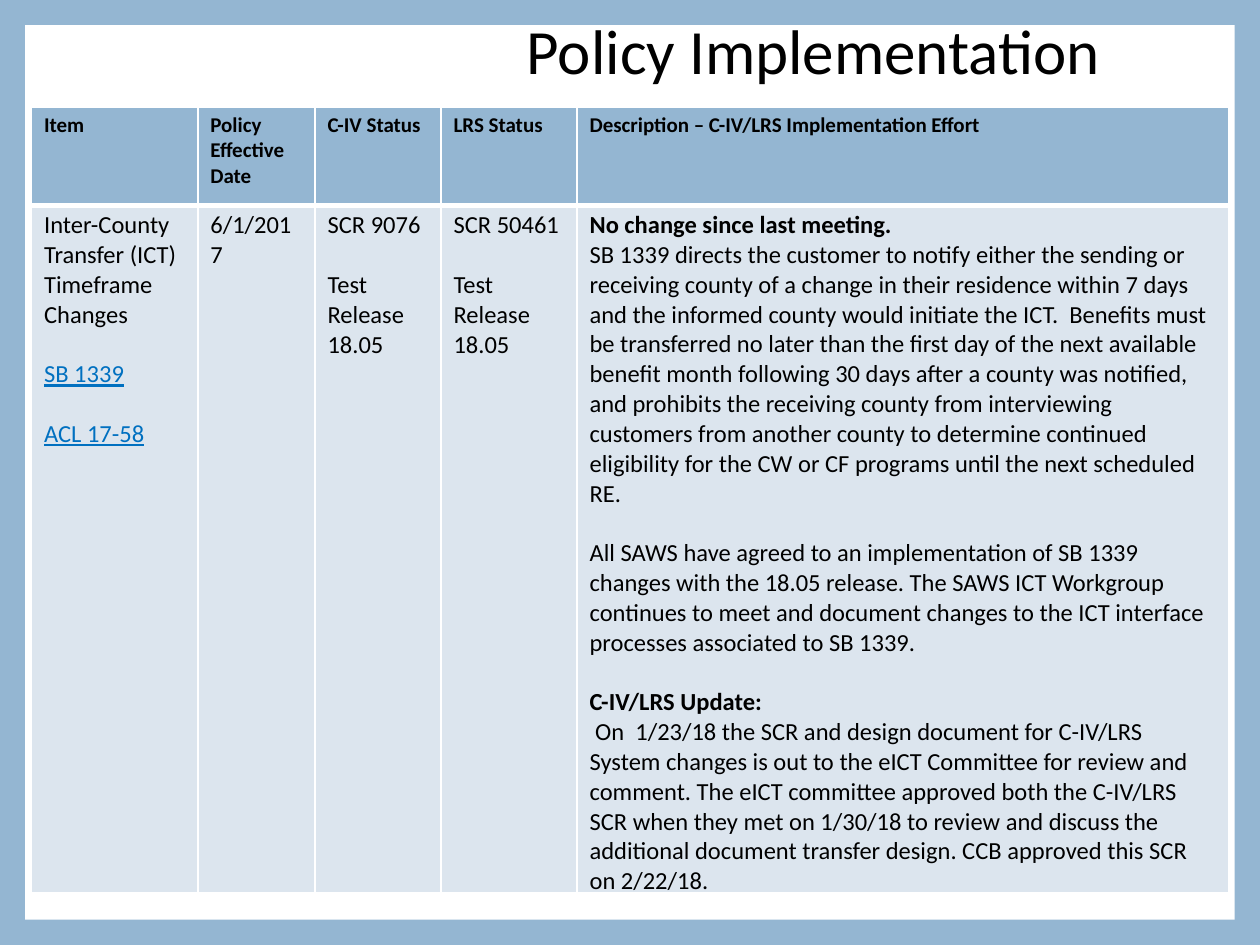
"""Build the Policy Implementation status slide."""
from lxml import etree
from pptx import Presentation
from pptx import util as u
from pptx.dml.color import RGBColor
from pptx.enum import shapes, text
from pptx.oxml import ns

BLUE, PALE, WHITE, BLACK, LINK = "94B6D2", "DCE5EE", "FFFFFF", "000000", "0070C0"
FONT = "Calibri"
TITLE = "Policy Implementation"
WIDTHS = [1.32, 0.93, 1, 1.08, 5.17]
HEIGHTS = [0.78, 5.16]
GAP = 17.1

HEADS = ["Item", "Policy Effective Date", "C-IV Status", "LRS Status",
         "Description – C-IV/LRS Implementation Effort"]
STATUS = [("Test", "gap"), ("Release", ""), ("18.05", "")]
BODY = [
    [("Inter-County Transfer (ICT) Timeframe Changes", ""),
     ("SB 1339", "gap link"), ("ACL 17-58", "gap link")],
    [("6/1/2017", "")],
    [("SCR 9076", "")] + STATUS,
    [("SCR 50461", "")] + STATUS,
    [("No change since last meeting.", "bold"),
     ("SB 1339 directs the customer to notify either the sending or receiving "
      "county of a change in their residence within 7 days and the informed "
      "county would initiate the ICT.  Benefits must be transferred no later "
      "than the first day of the next available benefit month following 30 "
      "days after a county was notified, and prohibits the receiving county "
      "from interviewing customers from another county to determine continued "
      "eligibility for the CW or CF programs until the next scheduled RE.", ""),
     ("All SAWS have agreed to an implementation of SB 1339 changes with the "
      "18.05 release. The SAWS ICT Workgroup continues to meet and document "
      "changes to the ICT interface processes associated to SB 1339.", "gap"),
     ("C-IV/LRS Update:", "gap bold"),
     (" On  1/23/18 the SCR and design document for C-IV/LRS System changes is "
      "out to the eICT Committee for review and comment. The eICT committee "
      "approved both the C-IV/LRS SCR when they met on 1/30/18 to review and "
      "discuss the additional document transfer design. CCB approved this SCR "
      "on 2/22/18.", "")],
]
ROWS = [([[(head, "bold")] for head in HEADS], 12, BLUE, 3), (BODY, 14, PALE, 1)]


def paint(fill, shade):
    """Give a fill one solid colour."""
    fill.solid()
    fill.fore_color.rgb = RGBColor.from_string(shade)


def write(par, words, size, look=""):
    """Put styled words in a paragraph."""
    par.text = words
    if "gap" in look:
        par.space_before = u.Pt(GAP)
    font = par.runs[0].font
    font.name, font.size = FONT, u.Pt(size)
    font.bold = "bold" in look
    font.underline = "link" in look
    font.color.rgb = RGBColor.from_string(LINK if "link" in look else BLACK)


def edge(cell, base):
    """Draw white borders, with the given width in points at the base."""
    props = cell._tc.get_or_add_tcPr()
    for side, width in zip("LRTB", (1, 1, 1, base)):
        line = etree.SubElement(props, ns.qn("a:ln" + side), w=str(u.Pt(width)))
        fill = etree.SubElement(line, ns.qn("a:solidFill"))
        etree.SubElement(fill, ns.qn("a:srgbClr"), val=WHITE)


def fill_cell(cell, lines, size, shade, base):
    """Set the borders, fill and text of a cell."""
    edge(cell, base)
    paint(cell.fill, shade)
    cell.margin_top = cell.margin_bottom = u.Inches(0.04)
    frame = cell.text_frame
    for i, (words, look) in enumerate(lines):
        par = frame.add_paragraph() if i else frame.paragraphs[0]
        write(par, words, size, look)


def main():
    """Build and save the slide."""
    deck = Presentation()
    deck.slide_width, deck.slide_height = u.Inches(10), u.Inches(7.5)
    slide = deck.slides.add_slide(deck.slide_layouts[6])
    paint(slide.background.fill, BLUE)

    page = slide.shapes.add_shape(shapes.MSO_SHAPE.RECTANGLE,
                                  *map(u.Inches, (0.2, 0.2, 9.6, 7.1)))
    page.shadow.inherit = False
    paint(page.fill, WHITE)
    page.line.fill.background()

    title = slide.shapes.add_textbox(*map(u.Inches, (0.5, 0.08, 8.33, 0.7)))
    frame = title.text_frame
    frame.word_wrap = True
    frame.vertical_anchor = text.MSO_ANCHOR.MIDDLE
    par = frame.paragraphs[0]
    write(par, TITLE, 36)
    par.alignment, par.line_spacing = text.PP_ALIGN.RIGHT, 0.9

    table = slide.shapes.add_table(
        len(ROWS), len(WIDTHS), u.Inches(0.25), u.Inches(0.85),
        u.Inches(sum(WIDTHS)), u.Inches(sum(HEIGHTS))).table
    for col, width in zip(table.columns, WIDTHS):
        col.width = u.Inches(width)
    for row, height, (cells, size, shade, base) in zip(table.rows, HEIGHTS, ROWS):
        row.height = u.Inches(height)
        for cell, lines in zip(row.cells, cells):
            fill_cell(cell, lines, size, shade, base)

    deck.save("out.pptx")


if __name__ == "__main__":
    main()
